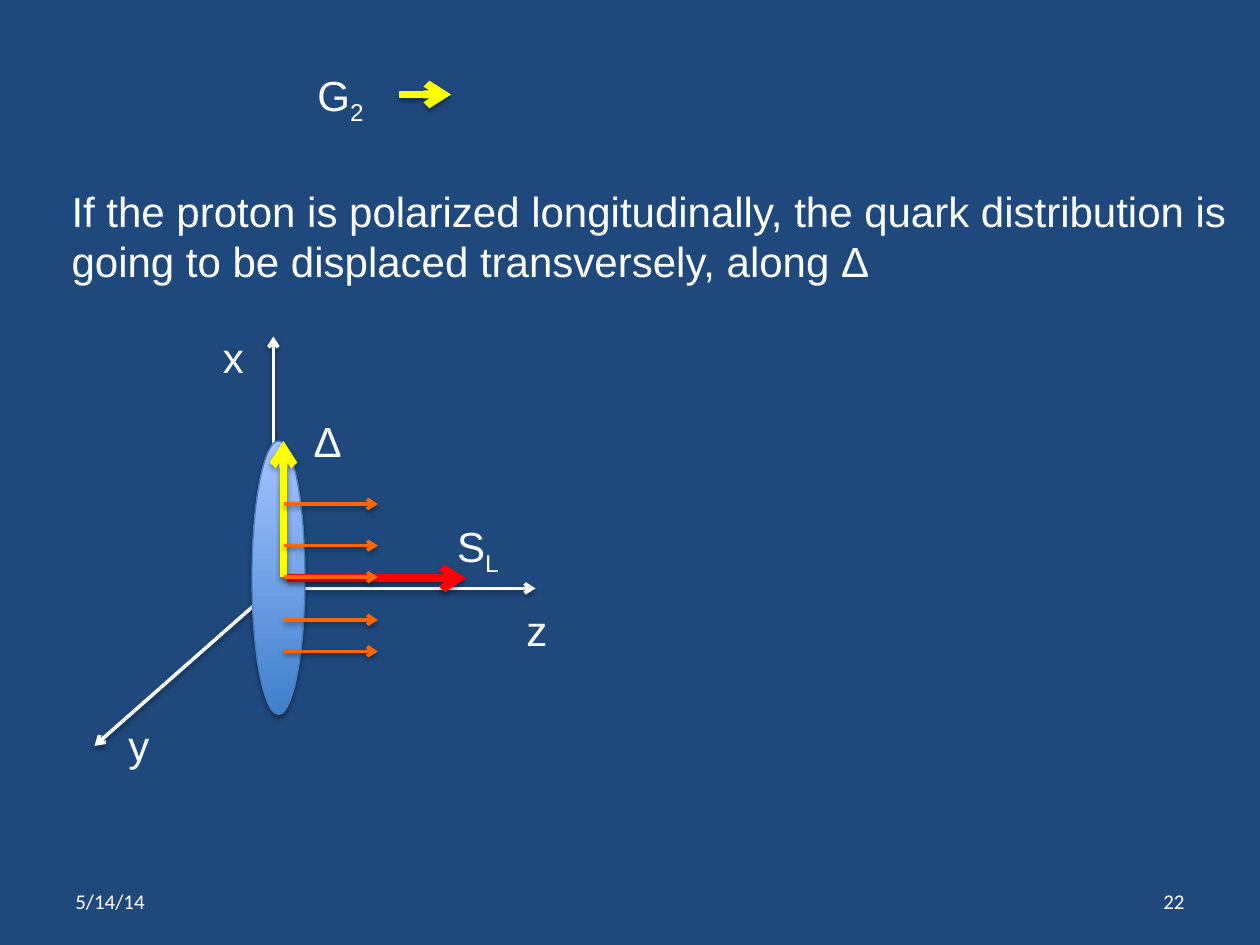
from pptx import Presentation
from pptx.dml.color import RGBColor as RGB
from pptx.enum.shapes import MSO_CONNECTOR as Line, MSO_SHAPE as Shape
from pptx.enum.text import MSO_ANCHOR as Anchor, MSO_AUTO_SIZE as AutoSize, PP_ALIGN as Align
from pptx.oxml import parse_xml
from pptx.util import Inches, Pt

THEME = {
    "background": "1F497D", "ink": "FFFFFF", "delta": "FFFF00", "spin": "FF0000",
    "quark": "FF6600", "disc_low": "3F80CE", "disc_high": "A4C4FF", "disc_edge": "4B7EBC",
    "body": {"name": "Arial", "size": Pt(24)},
    "footer": {"name": "Calibri", "size": Pt(12)},
    "thin": 2, "thick": 4.5,
}
NS = 'xmlns:a="http://schemas.openxmlformats.org/drawingml/2006/main"'

# Content: text, subscript, box (left, top, width, height)
statement = ("If the proton is polarized longitudinally, the quark distribution is "
             "going to be displaced transversely, along Δ")
statement_box = (0.47, 1.42, 9.5, 0.91)
labels = [
    ("G", "2", (2.42, 0.5, 0.59, 0.5)),
    ("S", "L", (3.53, 4.08, 0.55, 0.5)),
    ("z", "", (4.08, 4.75, 0.37, 0.5)),
    ("y", "", (0.92, 5.66, 0.37, 0.5)),
    ("x", "", (1.67, 2.58, 0.37, 0.5)),
    ("Δ", "", (2.39, 3.25, 0.44, 0.5)),
]
footers = [("5/14/14", 0.5, Align.LEFT), ("22", 7.17, Align.RIGHT)]

# Geometry of the diagram
origin = (2.17, 4.67)
axis_tips = [(0.75, 5.92), (2.17, 2.67), (4.25, 4.67)]
disc_box = (2, 3.5, 0.42, 2.17)
quark_start, quark_end = 2.25, 3
quark_heights = [4.33, 4.58, 4.92, 5.17, 4]

deck = Presentation()
deck.slide_width, deck.slide_height = Inches(10), Inches(7.5)
slide = deck.slides.add_slide(deck.slide_layouts[6])
slide.background.fill.solid()
slide.background.fill.fore_color.rgb = RGB.from_string(THEME["background"])


def add_shadow(part, opacity, distance):
    part._element.spPr.append(parse_xml(
        f'<a:effectLst {NS}><a:outerShdw blurRad="{Pt(3.1)}" dist="{Pt(distance)}" '
        f'dir="5400000" rotWithShape="0"><a:srgbClr val="000000">'
        f'<a:alpha val="{opacity * 1000}"/></a:srgbClr></a:outerShdw></a:effectLst>'))


def add_arrow(start, end, color, weight):
    arrow = slide.shapes.add_connector(Line.STRAIGHT, *map(Inches, start + end))
    arrow.line.color.rgb = RGB.from_string(THEME[color])
    arrow.line.width = Pt(THEME[weight])
    arrow.line._get_or_add_ln().append(parse_xml(f'<a:tailEnd {NS} type="arrow"/>'))
    add_shadow(arrow, 38, 1.6)


def add_text(text, box, style="body", subscript="", align=Align.LEFT, **frame_format):
    frame = slide.shapes.add_textbox(*map(Inches, box)).text_frame
    for setting, value in frame_format.items():
        setattr(frame, setting, value)
    paragraph = frame.paragraphs[0]
    paragraph.alignment = align
    for words in filter(None, (text, subscript)):
        run = paragraph.add_run()
        run.text = words
        for setting, value in THEME[style].items():
            setattr(run.font, setting, value)
        run.font.color.rgb = RGB.from_string(THEME["ink"])
    if subscript:
        run.font._element.set("baseline", "-25000")


# Axes, behind the disc
for tip in axis_tips:
    add_arrow(origin, tip, "ink", "thin")

# Proton disc
disc = slide.shapes.add_shape(Shape.OVAL, *map(Inches, disc_box))
disc.fill.gradient()
disc.fill.gradient_angle = 90
for stop, shade in zip(disc.fill.gradient_stops, ("disc_low", "disc_high")):
    stop.color.rgb = RGB.from_string(THEME[shade])
disc.line.color.rgb = RGB.from_string(THEME["disc_edge"])
disc.line.width = Pt(0.75)
add_shadow(disc, 35, 1.8)

# Spin, displacement and the G2 key
add_arrow((2.28, 4.59), (3.7, 4.59), "spin", "thick")
add_arrow((2.25, 4.58), (2.25, 3.5), "delta", "thick")
add_arrow((3.17, 0.75), (3.58, 0.75), "delta", "thick")

# Quark momenta
for height in quark_heights:
    add_arrow((quark_start, height), (quark_end, height), "quark", "thin")

# Text
add_text(statement, statement_box, word_wrap=True, auto_size=AutoSize.SHAPE_TO_FIT_TEXT)
for symbol, subscript, box in labels:
    add_text(symbol, box, subscript=subscript,
             word_wrap=False, auto_size=AutoSize.SHAPE_TO_FIT_TEXT)
for words, left, align in footers:
    add_text(words, (left, 6.95, 2.33, 0.4), "footer", align=align,
             word_wrap=True, vertical_anchor=Anchor.MIDDLE)

deck.save("out.pptx")
